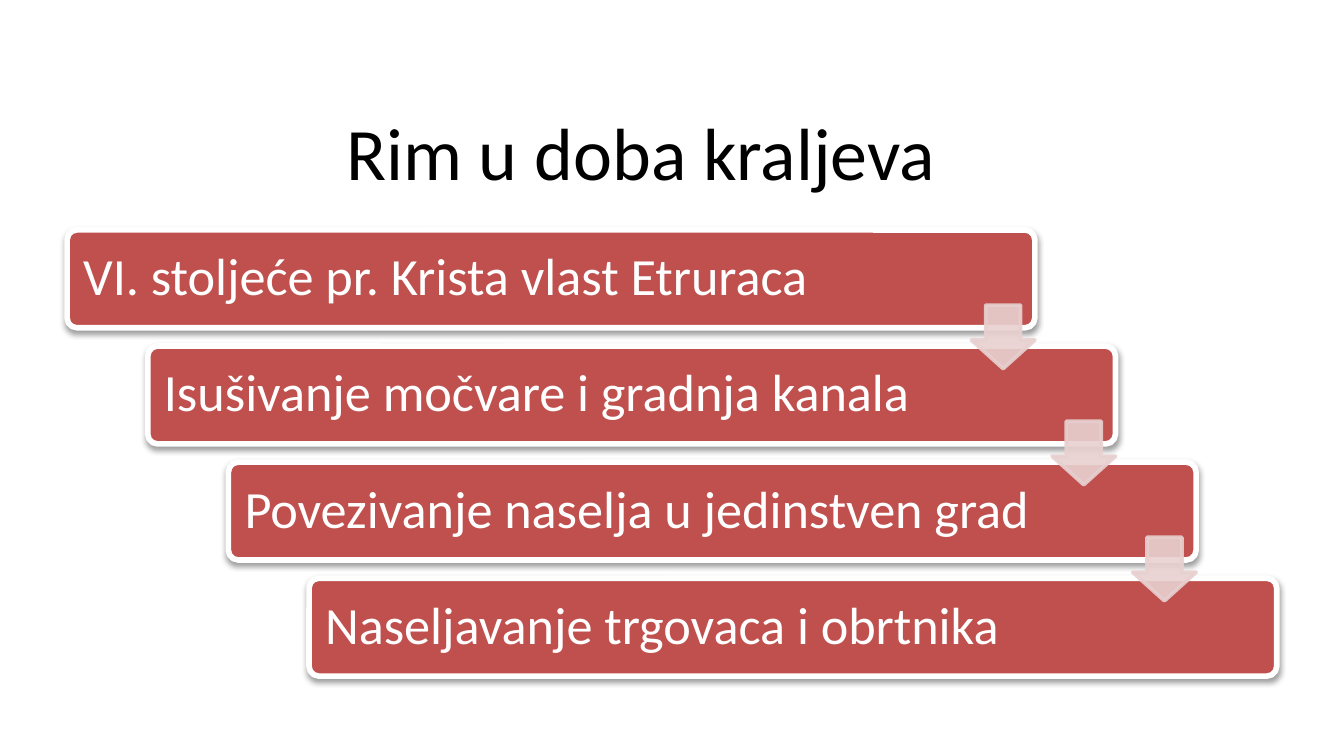
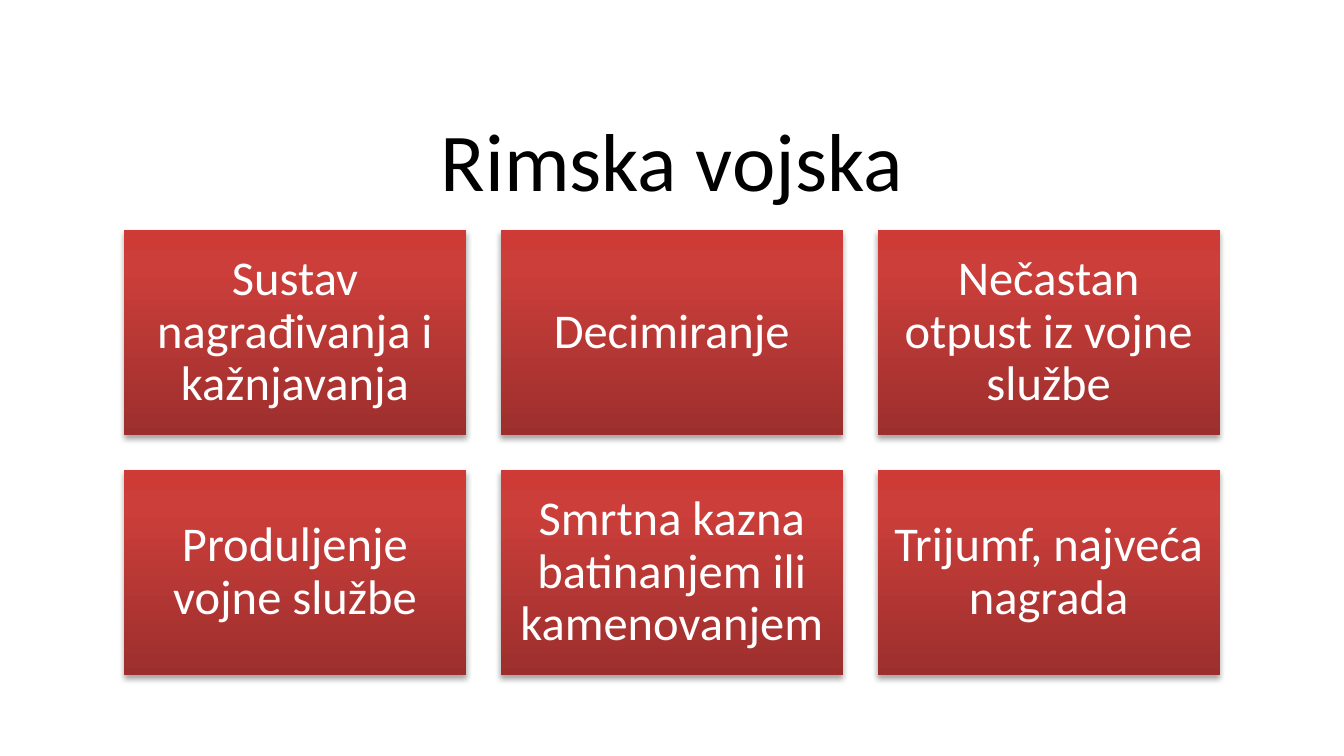
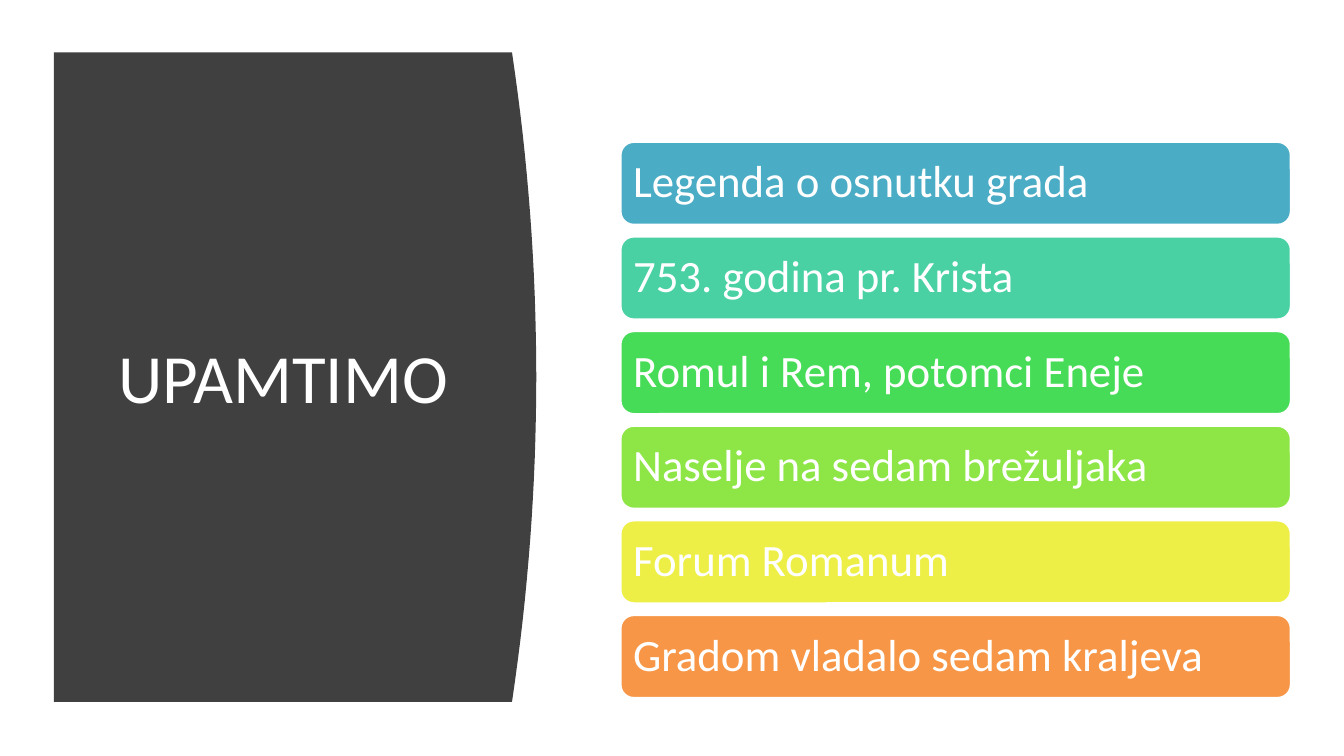
from collections import namedtuple
from copy import deepcopy
from dataclasses import dataclass

from lxml.etree import SubElement
from pptx import Presentation
from pptx.dml.color import RGBColor
from pptx.enum.shapes import MSO_SHAPE
from pptx.enum.text import MSO_ANCHOR, MSO_AUTO_SIZE, PP_ALIGN
from pptx.oxml.ns import qn
from pptx.util import Pt

Box = namedtuple("Box", "left top width height")


@dataclass(frozen=True)
class Theme:
    font: str = "Calibri"
    ink: str = "000000"
    paper: str = "FFFFFF"
    panel: str = "404040"
    step: str = "C0504D"
    arrow: str = "E8D0D0"
    arrow_opacity: int = 90
    tile_stops: tuple = ((0, "9C2F2D"), (0.8, "CB3E3A"), (1, "CE3B37"))
    list_fills: tuple = ("4BACC6", "49D1A3", "47DC57", "8DE646", "EEEF46", "F79646")
    kings_title: float = 39.6
    army_title: float = 44
    recap_title: float = 37
    step_text: float = 28
    tile_text: float = 26
    list_text: float = 24


THEME = Theme()

KINGS_STEPS = (
    "VI. stoljeće pr. Krista vlast Etruraca",
    "Isušivanje močvare i gradnja kanala",
    "Povezivanje naselja u jedinstven grad",
    "Naseljavanje trgovaca i obrtnika",
)
ARMY_TILES = (
    "Sustav nagrađivanja i kažnjavanja",
    "Decimiranje",
    "Nečastan otpust iz vojne službe",
    "Produljenje vojne službe",
    "Smrtna kazna batinanjem ili kamenovanjem",
    "Trijumf, najveća nagrada",
)
RECAP_FACTS = (
    "Legenda o osnutku grada",
    "753. godina pr. Krista",
    "Romul i Rem, potomci Eneje",
    "Naselje na sedam brežuljaka",
    "Forum Romanum",
    "Gradom vladalo sedam kraljeva",
)


def rgb(color):
    return RGBColor.from_string(color)


def write(frame, text, size, color, align, spacing=0.9):
    frame.word_wrap = True
    frame.auto_size = MSO_AUTO_SIZE.NONE
    frame.vertical_anchor = MSO_ANCHOR.MIDDLE
    paragraph = frame.paragraphs[0]
    paragraph.text = text
    paragraph.alignment = align
    paragraph.line_spacing = spacing
    paragraph.font.name = THEME.font
    paragraph.font.size = Pt(size)
    paragraph.font.color.rgb = rgb(color)


def set_insets(frame, side, edge):
    frame.margin_left = frame.margin_right = Pt(side)
    frame.margin_top = frame.margin_bottom = Pt(edge)


def set_title(slide, text, box, size, color=THEME.ink, spacing=0.9):
    title = slide.shapes.title
    title.left, title.top, title.width, title.height = map(Pt, box)
    write(title.text_frame, text, size, color, PP_ALIGN.CENTER, spacing)
    return title


def add_block(slide, kind, box, fill=None, line=None, line_width=1):
    block = slide.shapes.add_shape(kind, *map(Pt, box))
    block.shadow.inherit = False
    if fill:
        block.fill.solid()
        block.fill.fore_color.rgb = rgb(fill)
    if line:
        block.line.color.rgb = rgb(line)
        block.line.width = Pt(line_width)
    else:
        block.line.fill.background()
    return block


def add_shadow(block, opacity, distance):
    effects = block._element.spPr.find(qn("a:effectLst"))
    shadow = SubElement(effects, qn("a:outerShdw"), blurRad=str(Pt(3.1)),
                        dist=str(Pt(distance)), dir="5400000", rotWithShape="0")
    color = SubElement(shadow, qn("a:srgbClr"), val=THEME.ink)
    SubElement(color, qn("a:alpha"), val=str(opacity * 1000))


def set_opacity(block, percent):
    for color in block._element.spPr.iter(qn("a:srgbClr")):
        SubElement(color, qn("a:alpha"), val=str(percent * 1000))


def set_gradient(block, stops):
    block.fill.gradient()
    block.fill.gradient_angle = 90
    stop_list = block._element.spPr.find(".//" + qn("a:gsLst"))
    while len(stop_list) < len(stops):
        stop_list.append(deepcopy(stop_list[0]))
    for stop, (position, color) in zip(block.fill.gradient_stops, stops):
        stop.position = position
        stop.color.rgb = rgb(color)


def add_staircase(slide, box, steps):
    width, height, arrow_size = 518.4, 52.4, 34
    shift = (box.width - width) / (len(steps) - 1)
    drop = (box.height - height) / (len(steps) - 1)
    places = [Box(box.left + i * shift, box.top + i * drop, width, height)
              for i in range(len(steps))]
    for place, text in zip(places, steps):
        step = add_block(slide, MSO_SHAPE.ROUNDED_RECTANGLE, place,
                         THEME.step, THEME.paper, 3)
        step.adjustments[0] = 0.1
        add_shadow(step, 38, 1.6)
        set_insets(step.text_frame, 7.2, 7.2)
        write(step.text_frame, text, THEME.step_text, THEME.paper, PP_ALIGN.LEFT)
    for place in places[:-1]:
        middle = place.top + (height + drop) / 2
        spot = Box(place.left + width - arrow_size, middle - arrow_size / 2,
                   arrow_size, arrow_size)
        arrow = add_block(slide, MSO_SHAPE.DOWN_ARROW, spot,
                          THEME.arrow, THEME.arrow, 2)
        arrow.adjustments[0], arrow.adjustments[1] = 0.55, 0.45
        set_opacity(arrow, THEME.arrow_opacity)


def add_tiles(slide, box, tiles, columns=3, gap=18.4):
    rows = len(tiles) // columns
    width = (box.width - gap * (columns - 1)) / columns
    height = (box.height - gap * (rows - 1)) / rows
    for i, text in enumerate(tiles):
        row, column = divmod(i, columns)
        place = Box(box.left + column * (width + gap),
                    box.top + row * (height + gap), width, height)
        tile = add_block(slide, MSO_SHAPE.RECTANGLE, place)
        set_gradient(tile, THEME.tile_stops)
        add_shadow(tile, 35, 1.8)
        set_insets(tile.text_frame, 7.9, 7.9)
        write(tile.text_frame, text, THEME.tile_text, THEME.paper, PP_ALIGN.CENTER)


def add_curved_panel(slide, box, bulge=13, segments=32):
    chord = box.left + box.width - bulge
    arc = []
    for i in range(segments + 1):
        t = i / segments
        arc.append((Pt(chord + bulge * 4 * t * (1 - t)), Pt(box.top + box.height * t)))
    builder = slide.shapes.build_freeform(Pt(box.left), Pt(box.top))
    builder.add_line_segments(arc + [(Pt(box.left), Pt(box.top + box.height))])
    panel = builder.convert_to_shape()
    panel.shadow.inherit = False
    panel.fill.solid()
    panel.fill.fore_color.rgb = rgb(THEME.panel)
    panel.line.fill.background()
    slide.shapes.title._element.addprevious(panel._element)


def add_fact_list(slide, box, facts, gap=5.4):
    height = (box.height - gap * (len(facts) - 1)) / len(facts)
    for i, (text, fill) in enumerate(zip(facts, THEME.list_fills)):
        place = Box(box.left, box.top + i * (height + gap), box.width, height)
        fact = add_block(slide, MSO_SHAPE.ROUNDED_RECTANGLE, place,
                         fill, THEME.paper, 2)
        set_insets(fact.text_frame, 5, 5)
        write(fact.text_frame, text, THEME.list_text, THEME.paper, PP_ALIGN.LEFT)


def build_kings(slide):
    title = set_title(slide, "Rim u doba kraljeva", Box(19.4, 67, 648, 56),
                      THEME.kings_title)
    title.text_frame.margin_bottom = Pt(26)
    add_staircase(slide, Box(36, 123.2, 648, 239), KINGS_STEPS)


def build_army(slide):
    set_title(slide, "Rimska vojska", Box(36, 60.5, 648, 56), THEME.army_title)
    add_tiles(slide, Box(66.4, 123.2, 587.2, 238.4), ARMY_TILES)


def build_recap(slide):
    set_title(slide, "UPAMTIMO", Box(51, 60, 201.6, 283), THEME.recap_title,
              THEME.paper, 1)
    add_curved_panel(slide, Box(28.8, 28, 258.5, 348))
    add_fact_list(slide, Box(332, 75.6, 360, 298.8), RECAP_FACTS)


def main():
    deck = Presentation()
    deck.slide_width, deck.slide_height = Pt(720), Pt(405)
    title_only = deck.slide_layouts[5]
    for build in (build_kings, build_army, build_recap):
        build(deck.slides.add_slide(title_only))
    deck.save("out.pptx")


if __name__ == "__main__":
    main()
